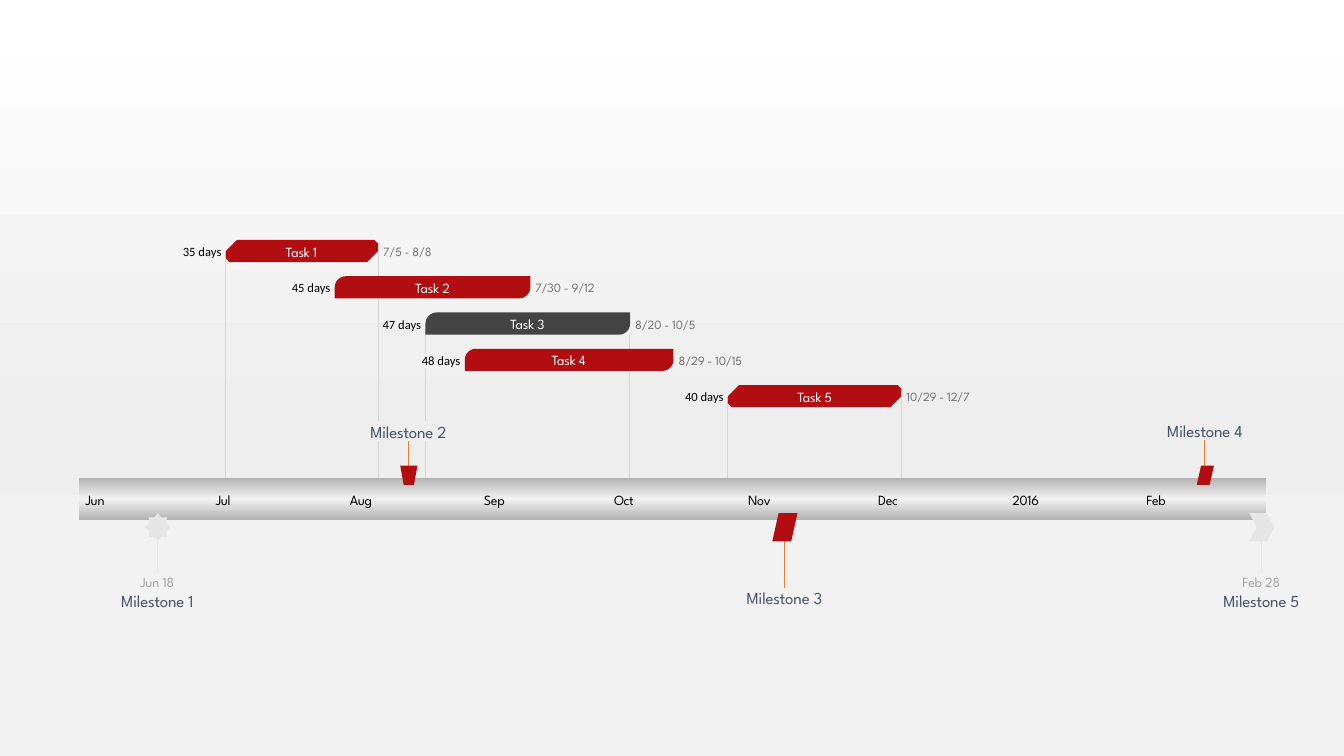
"""Draw a project timeline with task bars and milestones."""
from dataclasses import dataclass

from lxml.etree import SubElement
from pptx import Presentation
from pptx.dml.color import RGBColor as RGB
from pptx.enum.shapes import MSO_CONNECTOR as Link, MSO_SHAPE as Kind
from pptx.enum.text import MSO_ANCHOR as Anchor, PP_ALIGN as Align
from pptx.oxml.ns import qn
from pptx.util import Emu, Pt

SCALE = 9144
FACE, PLAIN = "League Spartan", "Calibri"
RED = RGB(0xB2, 0x0E, 0x12)
DARK = RGB(0x44, 0x44, 0x44)
PALE = RGB(0xE7, 0xE6, 0xE6)
ORANGE = RGB(0xED, 0x7D, 0x31)
RULE = RGB(0xD5, 0xD4, 0xD3)
NAVY = RGB(0x44, 0x54, 0x6A)
GREY = RGB(0xA5, 0xA5, 0xA5)
DIM = RGB(0x73, 0x73, 0x73)
BLACK = RGB(0, 0, 0)
WHITE = RGB(0xFF, 0xFF, 0xFF)
FOG = RGB(0xEE, 0xEE, 0xEE)
MIST = RGB(0xF2, 0xF2, 0xF2)
STEEL = RGB(0xB2, 0xB2, 0xB2)

TOP, STEP, TALL = 238, 36, 22
AXIS = 474


@dataclass
class Style:
    size: int
    color: RGB
    face: str = FACE
    align: Align = Align.CENTER
    track: int = -10


@dataclass
class Task:
    name: str
    x: int
    w: int
    days: str
    dates: str
    room: int
    kind: Kind
    color: RGB = RED


@dataclass
class Event:
    name: str
    mid: int
    y: int
    kind: Kind
    above: bool
    fill: RGB
    line: RGB
    date: str = ""


@dataclass
class Guide:
    x: int
    spans: list[tuple[int, int]]


@dataclass
class Month:
    name: str
    x: int
    w: int


MONTH = Style(10, BLACK, align=Align.LEFT, track=-20)
LABEL = Style(12, NAVY)
DATE = Style(10, GREY)
NAME = Style(10, WHITE)
DAYS = Style(9, BLACK, PLAIN, track=0)
SPAN = Style(9, DIM, align=Align.LEFT)

SNIP, ROUND = Kind.SNIP_2_DIAG_RECTANGLE, Kind.ROUND_2_DIAG_RECTANGLE
TASKS = [
    Task("Task 1", 224, 151, "35 days", "7/5 - 8/8", 50, SNIP),
    Task("Task 2", 332, 194, "45 days", "7/30 - 9/12", 64, ROUND),
    Task("Task 3", 422, 203, "47 days", "8/20 - 10/5", 64, ROUND, DARK),
    Task("Task 4", 461, 207, "48 days", "8/29 - 10/15", 71, ROUND),
    Task("Task 5", 722, 172, "40 days", "10/29 - 12/7", 71, SNIP),
]
EVENTS = [
    Event("Milestone 1", 156, 586, Kind.STAR_8_POINT, False, PALE, PALE, "Jun 18"),
    Event("Milestone 2", 405, 418, Kind.FLOWCHART_MANUAL_OPERATION, True, RED, ORANGE),
    Event("Milestone 3", 778, 583, Kind.PARALLELOGRAM, False, RED, ORANGE),
    Event("Milestone 4", 1195, 417, Kind.PARALLELOGRAM, True, RED, ORANGE),
    Event("Milestone 5", 1251, 586, Kind.CHEVRON, False, PALE, PALE, "Feb 28"),
]
GUIDES = [
    Guide(224, [(249, AXIS)]),
    Guide(375, [(249, 274), (296, 418), (438, AXIS)]),
    Guide(422, [(321, 350), (365, 418), (438, AXIS)]),
    Guide(624, [(332, 346), (369, AXIS)]),
    Guide(722, [(394, AXIS)]),
    Guide(894, [(394, AXIS)]),
]
MONTHS = [
    Month("Jun", 85, 24), Month("Jul", 214, 18), Month("Aug", 347, 29),
    Month("Sep", 480, 26), Month("Oct", 609, 26), Month("Nov", 742, 28),
    Month("Dec", 871, 29), Month("2016", 1004, 32), Month("Feb", 1137, 26),
]


def px(*vals: int) -> list[Emu]:
    return [Emu(v * SCALE) for v in vals]


def shade(fill, root, stops: list[tuple[int, RGB]]) -> None:
    fill.gradient()
    fill.gradient_angle = 270
    ramp = next(root.iter(qn("a:gsLst")))
    for old in list(ramp):
        ramp.remove(old)
    for pos, color in stops:
        stop = SubElement(ramp, qn("a:gs"), pos=str(pos * 1000))
        SubElement(stop, qn("a:srgbClr"), val=str(color))


def block(slide, kind: Kind, x: int, y: int, w: int, h: int, color: RGB):
    shape = slide.shapes.add_shape(kind, *px(x, y, w, h))
    shape.shadow.inherit = False
    shape.fill.solid()
    shape.fill.fore_color.rgb = color
    shape.line.fill.background()
    return shape


def write(slide, text: str, x: int, y: int, w: int, h: int, style: Style):
    box = slide.shapes.add_textbox(*px(x, y, w, h))
    frame = box.text_frame
    frame.word_wrap = False
    frame.vertical_anchor = Anchor.MIDDLE
    frame.margin_left = frame.margin_right = 0
    frame.margin_top = frame.margin_bottom = 0
    para = frame.paragraphs[0]
    para.alignment = style.align
    run = para.add_run()
    run.text = text
    run.font.size = Pt(style.size)
    run.font.name = style.face
    run.font.color.rgb = style.color
    run.font._element.set("spc", str(style.track))
    return box


def rule(slide, x: int, start: int, end: int, color: RGB):
    line = slide.shapes.add_connector(Link.STRAIGHT, *px(x, start, x, end))
    line.line.color.rgb = color
    line.line.width = Pt(0.75)
    SubElement(line._element.spPr, qn("a:effectLst"))
    return line


def draw_event(slide, event: Event) -> None:
    goal = write(slide, event.name, event.mid - 46, event.y, 92, 20, LABEL)
    if event.date:
        goal = write(slide, event.date, event.mid - 22, event.y - 17, 44, 17, DATE)
    if event.above:
        start, end, site, top, w, h = 472, event.y + 20, 2, 462, 17, 19
    else:
        start, end, site, top, w, h = 523, event.y, 0, 509, 25, 28
    stem = rule(slide, event.mid, start, end, event.line)
    stem.end_connect(goal, site)
    mark = block(slide, event.kind, event.mid - w // 2, top, w, h, event.fill)
    if event.kind == Kind.CHEVRON:
        mark.adjustments[0] = 0.3


def draw_task(slide, task: Task, y: int) -> None:
    bar = block(slide, task.kind, task.x, y, task.w, TALL, task.color)
    bar.adjustments[0] = 1
    bar.adjustments[1] = 0.167 if task.kind == SNIP else 0
    write(slide, task.days, task.x - 43, y + 4, 39, 15, DAYS)
    write(slide, task.dates, task.x + task.w + 5, y + 4, task.room, 15, SPAN)
    write(slide, task.name, task.x + task.w // 2 - 20, y + 3, 40, 17, NAME)


def main() -> None:
    deck = Presentation()
    deck.slide_width, deck.slide_height = px(1333, 750)
    slide = deck.slides.add_slide(deck.slide_layouts[6])
    shade(slide.background.fill, slide._element,
          [(0, WHITE), (57, FOG), (74, MIST), (100, MIST)])
    for guide in GUIDES:
        for start, end in guide.spans:
            rule(slide, guide.x, start, end, RULE)
    band = block(slide, Kind.RECTANGLE, 78, AXIS, 1178, 42, STEEL)
    shade(band.fill, band._element, [(0, STEEL), (50, MIST), (100, STEEL)])
    for month in MONTHS:
        write(slide, month.name, month.x, 487, month.w, 17, MONTH)
    for event in EVENTS:
        draw_event(slide, event)
    for row, task in enumerate(TASKS):
        draw_task(slide, task, TOP + STEP * row)
    deck.save("out.pptx")


if __name__ == "__main__":
    main()
